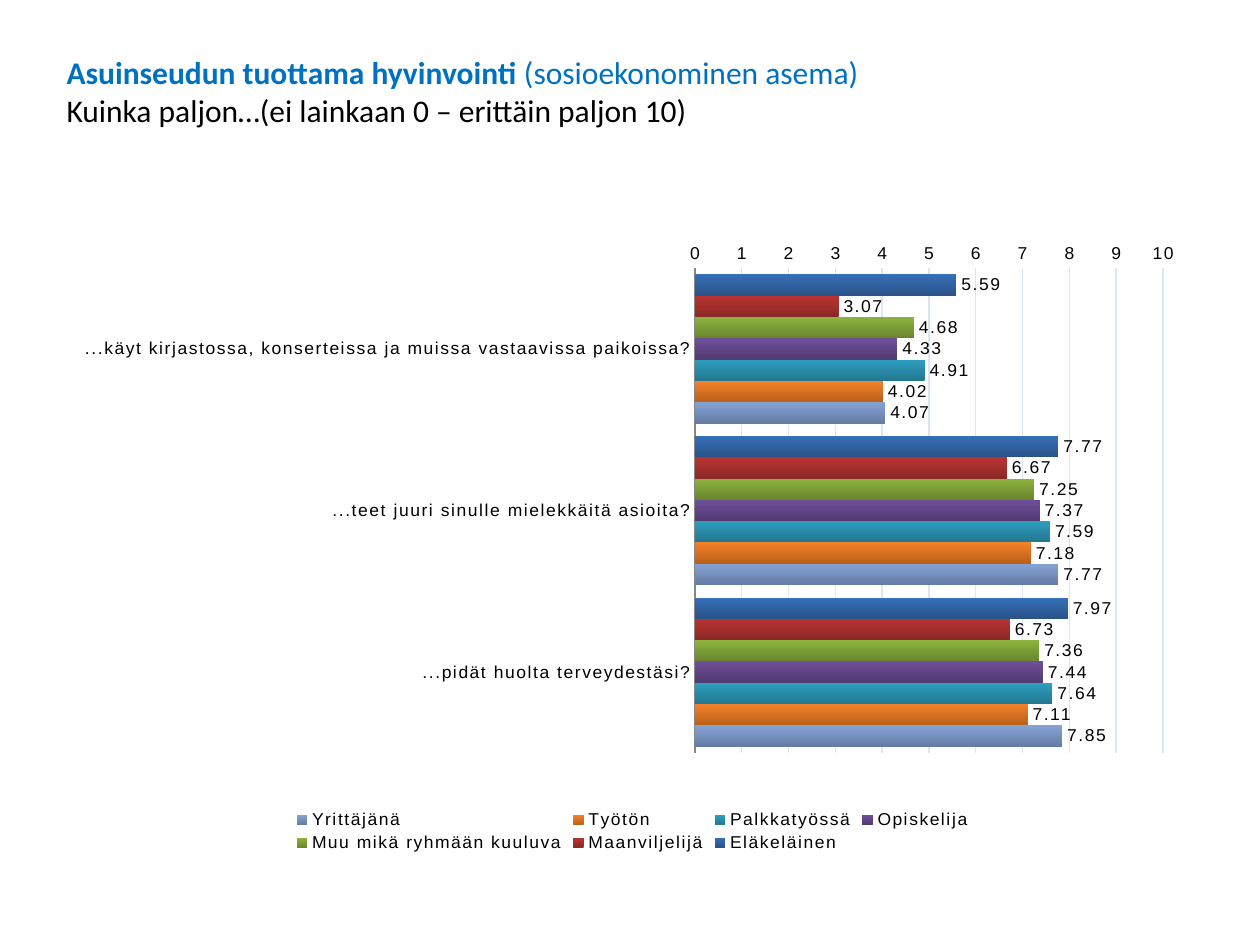
from dataclasses import dataclass

from lxml import etree
from pptx import Presentation
from pptx import util as u
from pptx.chart.data import CategoryChartData
from pptx.dml.color import RGBColor
from pptx.enum import chart as ch
from pptx.enum import text
from pptx.oxml.ns import qn

EMU_PER_PX = 914400 / 126
BLACK = RGBColor(0x00, 0x00, 0x00)
TITLE_BLUE = RGBColor(0x00, 0x70, 0xC0)
GRID = RGBColor(0xDC, 0xE6, 0xF2)
AXIS = RGBColor(0x86, 0x86, 0x86)


@dataclass(frozen=True)
class Group:
    name: str
    values: tuple[float, ...]
    light: RGBColor
    dark: RGBColor


@dataclass(frozen=True)
class Run:
    text: str
    color: RGBColor
    bold: bool = False


@dataclass(frozen=True)
class Box:
    x: int
    y: int
    w: int
    h: int

    def emu(self) -> tuple[int, ...]:
        return tuple(px(n) for n in (self.x, self.y, self.w, self.h))


QUESTIONS = (
    "...käyt kirjastossa, konserteissa ja muissa vastaavissa paikoissa?",
    "...teet juuri sinulle mielekkäitä asioita?",
    "...pidät huolta terveydestäsi?",
)
GROUPS = (
    Group("Eläkeläinen", (5.59, 7.77, 7.97),
          RGBColor(0x35, 0x70, 0xB9), RGBColor(0x2A, 0x52, 0x87)),
    Group("Maanviljelijä", (3.07, 6.67, 6.73),
          RGBColor(0xB9, 0x34, 0x31), RGBColor(0x8A, 0x28, 0x26)),
    Group("Muu mikä ryhmään kuuluva", (4.68, 7.25, 7.36),
          RGBColor(0x8D, 0xB3, 0x3D), RGBColor(0x6A, 0x85, 0x2E)),
    Group("Opiskelija", (4.33, 7.37, 7.44),
          RGBColor(0x6F, 0x4F, 0x9A), RGBColor(0x52, 0x3A, 0x71)),
    Group("Palkkatyössä", (4.91, 7.59, 7.64),
          RGBColor(0x2E, 0x9F, 0xC0), RGBColor(0x22, 0x77, 0x8F)),
    Group("Työtön", (4.02, 7.18, 7.11),
          RGBColor(0xF5, 0x81, 0x2A), RGBColor(0xB8, 0x60, 0x1A)),
    Group("Yrittäjänä", (4.07, 7.77, 7.85),
          RGBColor(0x86, 0xA3, 0xD6), RGBColor(0x64, 0x7C, 0xA3)),
)
TITLE_LINES = (
    (Run("Asuinseudun tuottama hyvinvointi ", TITLE_BLUE, True),
     Run("(sosioekonominen asema)", TITLE_BLUE)),
    (Run("Kuinka paljon…(ei lainkaan 0 – erittäin paljon 10)", BLACK),),
)
TITLE_BOX = Box(54, 47, 1150, 89)
CHART_BOX = Box(63, 244, 1134, 615)
PLOT_BOX = Box(695, 257, 468, 494)
LEGEND_BOX = Box(290, 806, 684, 50)


def px(n: int) -> int:
    return round(n * EMU_PER_PX)


def add_title(s) -> None:
    sp = s.shapes.title
    sp.left, sp.top, sp.width, sp.height = TITLE_BOX.emu()
    tf = sp.text_frame
    tf.word_wrap = True
    tf.auto_size = text.MSO_AUTO_SIZE.SHAPE_TO_FIT_TEXT
    tf.vertical_anchor = text.MSO_ANCHOR.TOP
    for i, line in enumerate(TITLE_LINES):
        p = tf.add_paragraph() if i else tf.paragraphs[0]
        p.alignment = text.PP_ALIGN.LEFT
        for run in line:
            r = p.add_run()
            r.text = run.text
            r.font.name, r.font.size, r.font.bold = "Calibri", u.Pt(18), run.bold
            r.font.color.rgb = run.color


def set_font(font) -> None:
    font.name, font.size, font.bold = "Arial", u.Pt(10), False
    font.color.rgb = BLACK


def manual_layout(box: Box, inner: bool = False):
    """Layout element placing a chart part at box, as fractions of the chart."""
    layout = etree.Element(qn("c:layout"))
    manual = etree.SubElement(layout, qn("c:manualLayout"))
    values = {"layoutTarget": "inner"} if inner else {}
    values |= {
        "xMode": "edge", "yMode": "edge",
        "x": (box.x - CHART_BOX.x) / CHART_BOX.w,
        "y": (box.y - CHART_BOX.y) / CHART_BOX.h,
        "w": box.w / CHART_BOX.w, "h": box.h / CHART_BOX.h,
    }
    for tag, value in values.items():
        etree.SubElement(manual, qn(f"c:{tag}")).set("val", str(value))
    return layout


def place_parts(chart) -> None:
    root = chart._chartSpace
    area = root.find(".//" + qn("c:plotArea"))
    legend = root.find(".//" + qn("c:legend"))
    for part in (area, legend):
        for old in part.findall(qn("c:layout")):
            part.remove(old)
    area.insert(0, manual_layout(PLOT_BOX, inner=True))
    legend.find(qn("c:legendPos")).addnext(manual_layout(LEGEND_BOX))


def style_axes(chart) -> None:
    cat, val = chart.category_axis, chart.value_axis
    for axis in (cat, val):
        axis.major_tick_mark = axis.minor_tick_mark = ch.XL_TICK_MARK.NONE
        set_font(axis.tick_labels.font)
    cat.reverse_order = True
    cat.crosses = ch.XL_AXIS_CROSSES.MAXIMUM
    cat.format.line.color.rgb = AXIS
    val.minimum_scale, val.maximum_scale, val.major_unit = 0, 10, 1
    val.tick_labels.number_format = "0"
    val.tick_labels.number_format_is_linked = False
    val.format.line.fill.background()
    val.has_major_gridlines = True
    grid = val.major_gridlines.format.line
    grid.color.rgb, grid.width = GRID, u.Pt(0.75)


def style_bars(plot) -> None:
    plot.gap_width, plot.overlap, plot.vary_by_categories = 58, 0, False
    for series, group in zip(plot.series, GROUPS):
        series.invert_if_negative = False
        fill = series.format.fill
        fill.gradient()
        fill.gradient_angle = 90
        for stop, color in zip(fill.gradient_stops, (group.dark, group.light)):
            stop.color.rgb = color
        labels = series.data_labels
        labels.show_value = True
        labels.number_format, labels.number_format_is_linked = "0.00", False
        labels.position = ch.XL_LABEL_POSITION.OUTSIDE_END
        set_font(labels.font)


def add_chart(s) -> None:
    data = CategoryChartData(number_format="0.00")
    data.categories = QUESTIONS
    for group in GROUPS:
        data.add_series(group.name, group.values)
    chart = s.shapes.add_chart(
        ch.XL_CHART_TYPE.BAR_CLUSTERED, *CHART_BOX.emu(), data).chart
    chart.has_title = False
    set_font(chart.font)
    style_axes(chart)
    style_bars(chart.plots[0])
    chart.has_legend = True
    chart.legend.position = ch.XL_LEGEND_POSITION.BOTTOM
    chart.legend.include_in_layout = False
    set_font(chart.legend.font)
    place_parts(chart)
    for props in chart._chartSpace.iter(qn("a:defRPr")):
        props.set("spc", "100")


def main() -> None:
    prs = Presentation()
    prs.slide_width, prs.slide_height = px(1260), px(945)
    s = prs.slides.add_slide(prs.slide_layouts[5])
    add_chart(s)
    add_title(s)
    prs.save("out.pptx")


if __name__ == "__main__":
    main()
